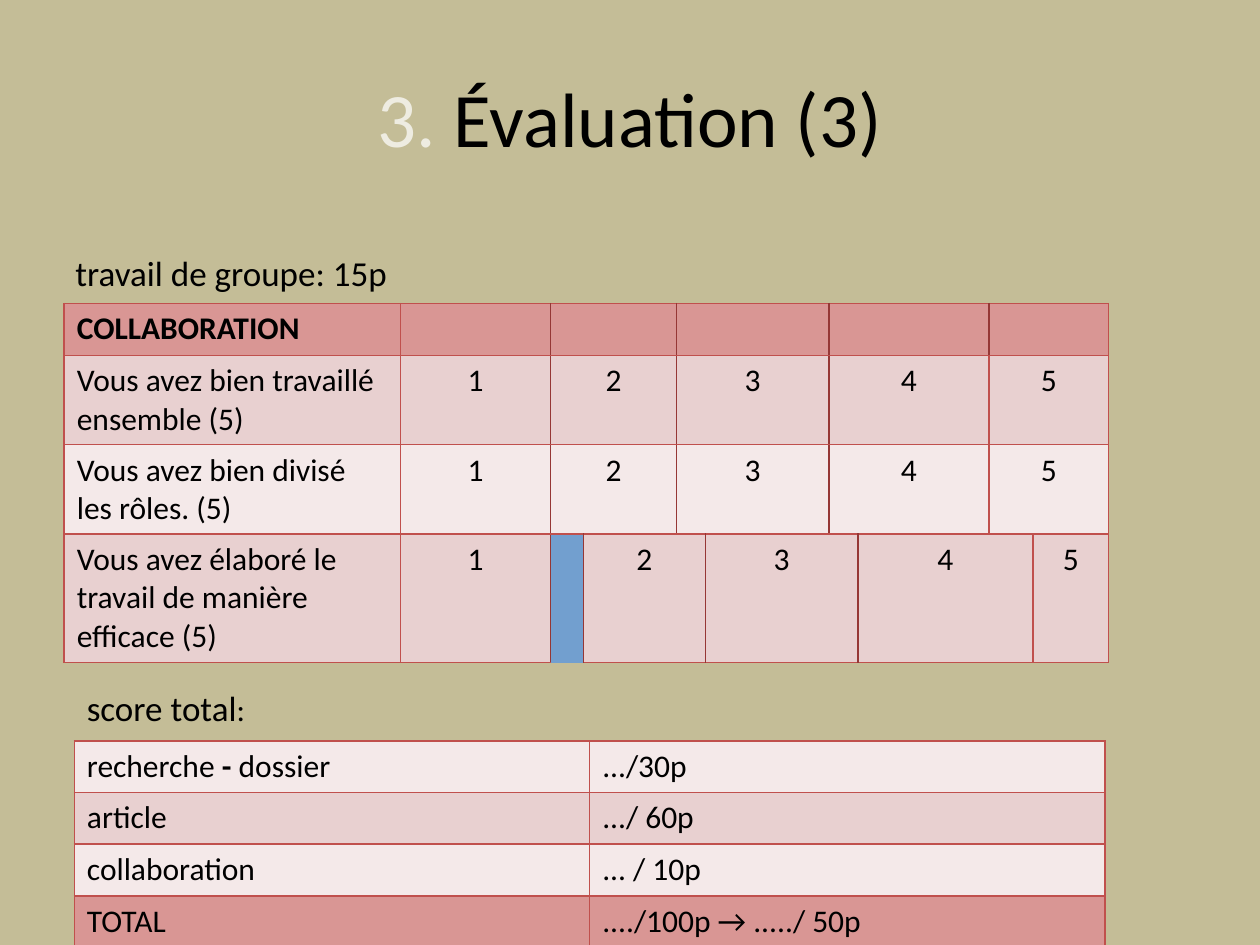
from pptx import Presentation
from pptx import util as u
from pptx.dml.color import RGBColor
from pptx.enum import text
from pptx.oxml import parse_xml
from pptx.oxml.ns import nsdecls

KHAKI = RGBColor(0xC4, 0xBD, 0x97)
CREAM = RGBColor(0xEE, 0xEC, 0xE1)
BLACK = RGBColor(0x00, 0x00, 0x00)
ROSE = RGBColor(0xD9, 0x96, 0x94)
PINK = RGBColor(0xE8, 0xD0, 0xD0)
PALE = RGBColor(0xF4, 0xE9, 0xE9)
RED = RGBColor(0xC0, 0x50, 0x4D)
DARK_RED = RGBColor(0x95, 0x37, 0x35)
CENTER = text.PP_ALIGN.CENTER


class SlideBuilder:
    font = "Calibri"

    def __init__(self, page):
        self.page = page

    def background(self, color):
        fill = self.page.background.fill
        fill.solid()
        fill.fore_color.rgb = color

    def add_spans(self, para, spans, size, align=None):
        """Fill a paragraph with (words, colour, bold) spans."""
        para.alignment = align
        for words, color, bold in spans:
            span = para.add_run()
            span.text = words
            span.font.name = self.font
            span.font.size = u.Pt(size)
            span.font.bold = bold
            span.font.color.rgb = color

    def label(self, place, spans, size, anchor, align=None):
        box = self.page.shapes.add_textbox(*map(u.Inches, place))
        frame = box.text_frame
        frame.word_wrap = True
        frame.vertical_anchor = anchor
        para = frame.paragraphs[0]
        self.add_spans(para, spans, size, align)
        return para

    def table(self, left, top, widths, heights):
        frame = self.page.shapes.add_table(
            len(heights), len(widths), u.Inches(left), u.Inches(top),
            u.Inches(sum(widths)), u.Inches(sum(heights)))
        grid = frame.table
        grid.first_row = grid.horz_banding = False
        for column, width in zip(grid.columns, widths):
            column.width = u.Inches(width)
        for row, height in zip(grid.rows, heights):
            row.height = u.Inches(height)
        return grid

    def cell(self, cell, fill, spans=(), align=None, left=RED, right=RED):
        props = cell._tc.get_or_add_tcPr()
        for side, color in zip("LRTB", (left, right, RED, RED)):
            props.append(parse_xml(
                f'<a:ln{side} {nsdecls("a")} w="12700"><a:solidFill>'
                f'<a:srgbClr val="{color}"/></a:solidFill></a:ln{side}>'))
        cell.fill.solid()
        cell.fill.fore_color.rgb = fill
        self.add_spans(cell.text_frame.paragraphs[0], spans, 18, align)


def plain(words):
    return [(words, BLACK, False)]


def main():
    deck = Presentation()
    deck.slide_width, deck.slide_height = u.Inches(10), u.Inches(7.5)
    builder = SlideBuilder(deck.slides.add_slide(deck.slide_layouts[6]))
    builder.background(KHAKI)

    # Title and section label
    builder.label((0.5, 0.3, 9, 1.25),
                  [("3. ", CREAM, False)] + plain("Évaluation (3)"),
                  44, text.MSO_ANCHOR.MIDDLE, CENTER)
    builder.label((0.5, 1.68, 7.81, 0.7), plain("travail de groupe: 15p"),
                  20, text.MSO_ANCHOR.BOTTOM)

    # Group work: each score spans a pair of columns
    criteria = [
        ("COLLABORATION", ROSE),
        ("Vous avez bien travaillé ensemble (5)", PINK),
        ("Vous avez bien divisé les rôles. (5)", PALE),
        ("Vous avez élaboré le travail de manière efficace (5)", PINK),
    ]
    widths = [2.67, 0.48, 0.71, 0.26, 0.74, 0.23, 0.98, 0.23, 1.04, 0.35, 0.6]
    grid = builder.table(0.51, 2.41, widths, [0.41, 0.71, 0.71, 1.02])
    for r, (criterion, fill) in enumerate(criteria):
        header = r == 0
        builder.cell(grid.cell(r, 0), fill, [(criterion, BLACK, header)])
        edges = [RED, DARK_RED, DARK_RED, DARK_RED,
                 DARK_RED if header else RED, RED]
        for score in range(1, 6):
            first, second = grid.cell(r, 2 * score - 1), grid.cell(r, 2 * score)
            sides = {"left": edges[score - 1], "right": edges[score]}
            first.merge(second)
            builder.cell(first, fill, () if header else plain(str(score)),
                         CENTER, **sides)
            builder.cell(second, fill, **sides)

    # Total score
    para = builder.label((0.59, 5.09, 8.11, 0.74), plain("score total"),
                         20, text.MSO_ANCHOR.BOTTOM)
    builder.add_spans(para, plain(":"), 18)

    totals = [
        (plain("recherche") + [(" - ", BLACK, True)] + plain("dossier"),
         ".../30p", PALE),
        (plain("article"), ".../ 60p", PINK),
        (plain("collaboration"), "... / 10p", PALE),
        (plain("TOTAL"), "..../100p → ...../ 50p", ROSE),
    ]
    grid = builder.table(0.59, 5.88, [4.09] * 2, [0.41] * len(totals))
    for r, (part, points, fill) in enumerate(totals):
        builder.cell(grid.cell(r, 0), fill, part)
        builder.cell(grid.cell(r, 1), fill, plain(points))

    deck.save("out.pptx")


if __name__ == "__main__":
    main()
